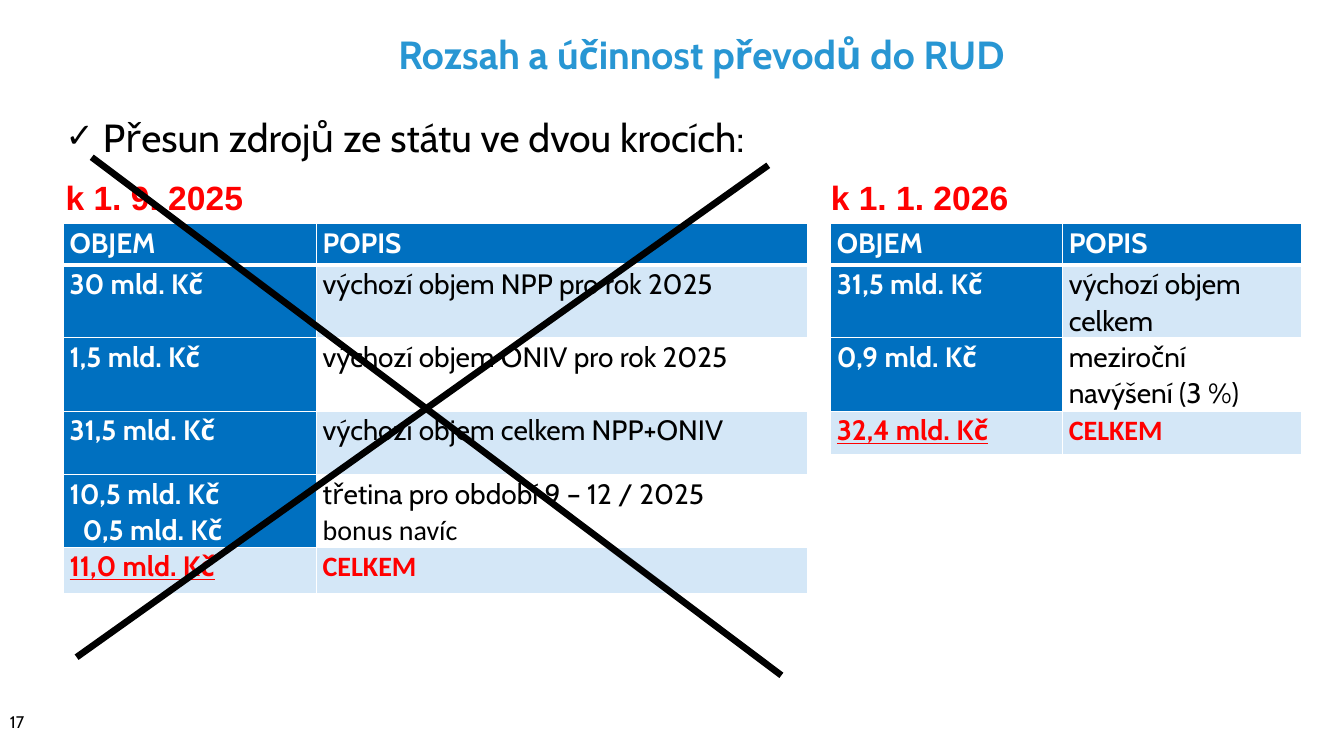
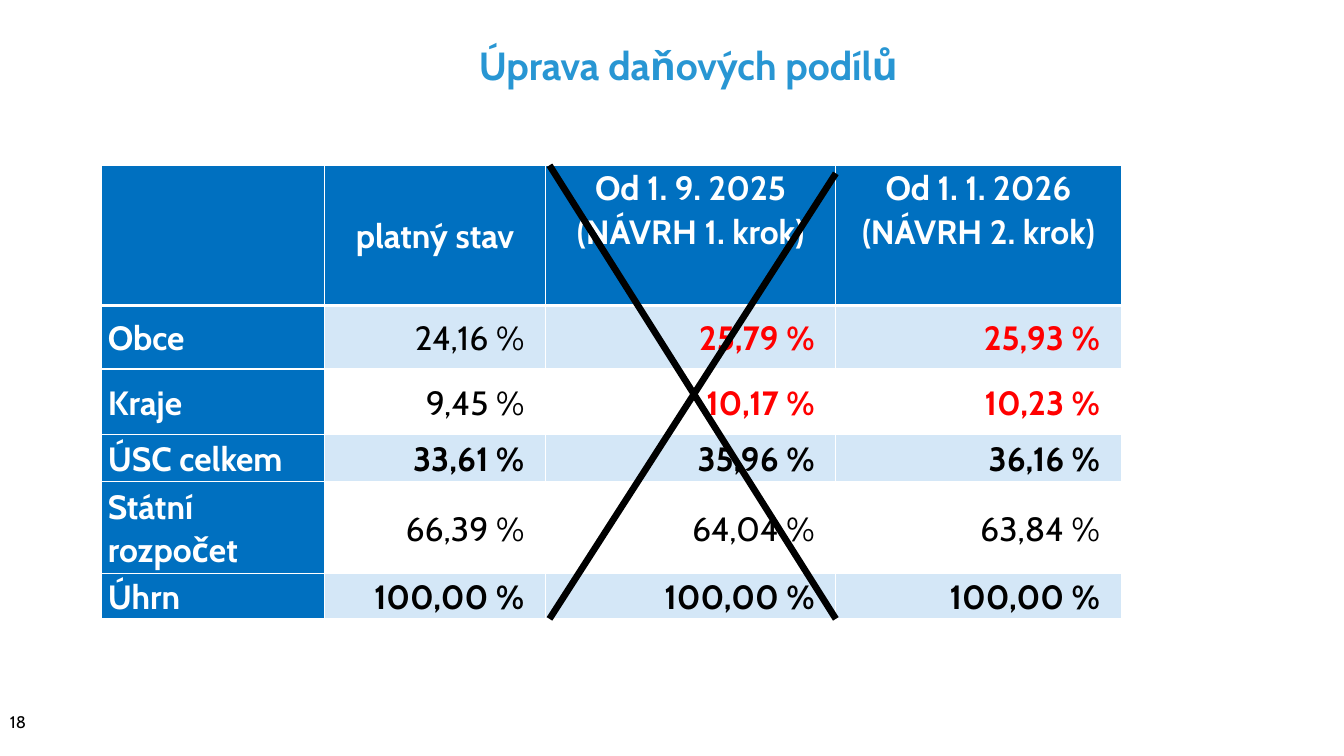
from lxml import etree
from pptx import Presentation
from pptx.dml.color import RGBColor
from pptx.enum import shapes, text
from pptx.oxml import ns
from pptx.util import Inches, Pt

MID, TOP = text.MSO_ANCHOR.MIDDLE, text.MSO_ANCHOR.TOP
LEFT, MITTE, RIGHT = text.PP_ALIGN.LEFT, text.PP_ALIGN.CENTER, text.PP_ALIGN.RIGHT


class Theme:
    blue, pale, white = "0070C0", "D4E7F7", "FFFFFF"
    sky, red, black = "2896D3", "FF0000", "000000"
    main, alt, sans = "Cabin", "Calibri", "Arial"
    title, date, cell, note = 28, 24, 20, 12
    cross = 4.75


HEAD = dict(color=Theme.white, bold=True, fill=Theme.blue)
TOTAL = dict(color=Theme.red, bold=True, fill=Theme.pale)
STYLES = {
    "head": HEAD,
    "inset": dict(HEAD, indent=0.13),
    "plain": dict(color=Theme.black),
    "calm": dict(color=Theme.black, name=Theme.alt),
    "bold": dict(color=Theme.black, bold=True),
    "red": dict(color=Theme.red, bold=True),
    "sum": dict(TOTAL, underline=True),
    "total": dict(TOTAL, name=Theme.alt),
}


def apply(item, values):
    for key, value in values.items():
        setattr(item, key, value)


def add_run(para, words, size, color, name=Theme.main, bold=False, underline=False):
    run = para.add_run()
    run.text = words
    apply(run.font, dict(size=Pt(size), name=name, bold=bold, underline=underline))
    run.font.color.rgb = RGBColor.from_string(color)


def add_tag(parent, tag, **attrs):
    node = etree.SubElement(parent, ns.qn("a:" + tag))
    for key, value in attrs.items():
        node.set(key, str(value))
    return node


def add_box(slide, box, anchor=TOP, left=0.1):
    frame = slide.shapes.add_textbox(*map(Inches, box)).text_frame
    apply(frame, dict(word_wrap=True, vertical_anchor=anchor, margin_left=Inches(left)))
    return frame


def add_title(slide, words, left, top):
    para = add_box(slide, (left, top, 11.81, 1.08), MID, 0.2).paragraphs[0]
    para.alignment = MITTE
    add_run(para, words, Theme.title, Theme.sky, bold=True)


def add_number(slide, number):
    para = add_box(slide, (0, 6.95, 0.48, 0.43), MID).paragraphs[0]
    add_run(para, str(number), Theme.note, Theme.black)


def add_cross(slide, *lines):
    for ends in lines:
        line = slide.shapes.add_connector(shapes.MSO_CONNECTOR.STRAIGHT, *map(Inches, ends))
        line.line.width = Pt(Theme.cross)
        line.line.color.rgb = RGBColor.from_string(Theme.black)
        add_tag(line._element.spPr, "effectLst")


def add_edges(cell, row):
    """White cell borders, thick between the header and the body."""
    props = cell._tc.get_or_add_tcPr()
    thick = {(0, "lnB"), (1, "lnT")}
    for side in ("lnL", "lnR", "lnT", "lnB"):
        edge = add_tag(props, side, w=Pt(3 if (row, side) in thick else 1))
        add_tag(add_tag(edge, "solidFill"), "srgbClr", val=Theme.white)


def fill_cell(cell, row, lines, size, align, anchor, right):
    """Each line is a pair of style name and words."""
    add_edges(cell, row)
    apply(cell, dict(margin_left=Inches(0.06), margin_right=Inches(right),
                     margin_top=0, margin_bottom=0, vertical_anchor=anchor))
    band = Theme.pale if row % 2 else Theme.white
    shade = STYLES[lines[0][0]].get("fill", band)
    cell.fill.solid()
    cell.fill.fore_color.rgb = RGBColor.from_string(shade)
    frame = cell.text_frame
    for index, (style, words) in enumerate(lines):
        para = frame.add_paragraph() if index else frame.paragraphs[0]
        apply(para, dict(alignment=align, line_spacing=1.07))
        form = dict(STYLES[style])
        form.pop("fill", None)
        indent = form.pop("indent", 0)
        if indent:
            para._p.get_or_add_pPr().set("marL", str(Inches(indent)))
        if words:
            add_run(para, words, size, **form)


def add_grid(slide, spot, cols, rows, cells, size, layout):
    """layout(row, col) gives alignment, anchor and right margin."""
    box = (*spot, sum(cols), sum(rows))
    table = slide.shapes.add_table(len(rows), len(cols), *map(Inches, box)).table
    for col, width in zip(table.columns, cols):
        col.width = Inches(width)
    for row, height in zip(table.rows, rows):
        row.height = Inches(height)
    for r, line in enumerate(cells):
        for c, lines in enumerate(line):
            fill_cell(table.cell(r, c), r, lines, size, *layout(r, c))


def add_intro(slide, box, words, dates, stop):
    frame = add_box(slide, box, left=0.02)
    para = frame.paragraphs[0]
    props = para._p.get_or_add_pPr()
    props.set("marL", str(Inches(0.37)))
    props.set("indent", str(-Inches(0.37)))
    add_tag(props, "buSzPct", val=86000)
    add_tag(props, "buFont", typeface=Theme.alt)
    add_tag(props, "buChar", char="✓")
    para.space_after = Pt(12)
    add_run(para, words, Theme.title, Theme.black)
    para = frame.add_paragraph()
    tabs = add_tag(para._p.get_or_add_pPr(), "tabLst")
    add_tag(tabs, "tab", pos=Inches(stop), algn="l")
    add_run(para, "\t".join(dates), Theme.date, Theme.red, Theme.sans, True)


def volumes(body, total):
    """Rows of amount and description, with header and total."""
    head = [[("head", "OBJEM")], [("head", "POPIS")]]
    rows = [[[("head", amount)], [("plain", words)]] for amount, words in body]
    return [head, *rows, [[("sum", total)], [("total", "CELKEM")]]]


def build_scope(slide):
    add_title(slide, "Rozsah a účinnost převodů do RUD", 1, -0.01)
    add_intro(slide, (0.63, 1.07, 10.09, 1.15), "Přesun zdrojů ze státu ve dvou krocích:",
              ("k 1. 9. 2025", "k 1. 1. 2026"), 7.59)
    first = volumes([
        ("30 mld. Kč", "výchozí objem NPP pro rok 2025"),
        ("1,5 mld. Kč", "výchozí objem ONIV pro rok 2025"),
        ("31,5 mld. Kč", "výchozí objem celkem NPP+ONIV"),
        ("10,5 mld. Kč", "třetina pro období 9 – 12 / 2025"),
    ], "11,0 mld. Kč")
    first[4][0].append(("inset", "0,5 mld. Kč"))
    first[4][1].append(("calm", "bonus navíc"))
    second = volumes([
        ("31,5 mld. Kč", "výchozí objem celkem"),
        ("0,9 mld. Kč", "meziroční navýšení (3 %)"),
    ], "32,4 mld. Kč")
    grids = [
        (0.63, (2.51, 4.87), (0.41, 0.72, 0.73, 0.63, 0.72, 0.46), first),
        (8.24, (2.3, 2.37), (0.41, 0.72, 0.73, 0.43), second),
    ]
    for left, cols, rows, cells in grids:
        add_grid(slide, (left, 2.22), cols, rows, cells, Theme.cell,
                 lambda r, c: (LEFT, TOP, 0.06))
    add_cross(slide, (0.91, 1.56, 7.75, 6.7), (0.76, 6.52, 7.62, 1.64))


def share_layout(row, col):
    if row == 0:
        return MITTE, TOP if col > 1 else MID, 0.06
    return (RIGHT, MID, 0.21) if col else (LEFT, MID, 0.06)


def build_shares(slide):
    add_title(slide, "Úprava daňových podílů", 0.87, 0.1)
    heads = ("", "platný stav"), ("Od 1. 9. 2025", "(NÁVRH 1. krok)"), ("Od 1. 1. 2026", "(NÁVRH 2. krok)")
    cells = [[[("head", words)] for words in heads[0]]
             + [[("head", words) for words in pair] for pair in heads[1:]]]
    body = [
        ("Obce", "plain", "red", ("24,16", "25,79", "25,93")),
        ("Kraje", "plain", "red", ("9,45", "10,17", "10,23")),
        ("ÚSC celkem", "bold", "bold", ("33,61", "35,96", "36,16")),
        ("Státní rozpočet", "plain", "plain", ("66,39", "64,04", "63,84")),
        ("Úhrn", "bold", "bold", ("100,00",) * 3),
    ]
    for name, now, plan, values in body:
        styles = (now, plan, plan)
        cells.append([[("head", name)]] + [[(s, v + " %")] for s, v in zip(styles, values)])
    add_grid(slide, (1.01, 1.64), (2.21, 2.19, 2.88, 2.83),
             (1.39, 0.63, 0.65, 0.47, 0.91, 0.45), cells, Theme.date, share_layout)
    add_cross(slide, (5.45, 1.64, 8.29, 6.14), (5.45, 6.14, 8.29, 1.72))


def main():
    deck = Presentation()
    apply(deck, dict(slide_width=Inches(13.33), slide_height=Inches(7.5)))
    for number, build in enumerate((build_scope, build_shares), 17):
        slide = deck.slides.add_slide(deck.slide_layouts[6])
        build(slide)
        add_number(slide, number)
    deck.save("out.pptx")


if __name__ == "__main__":
    main()
